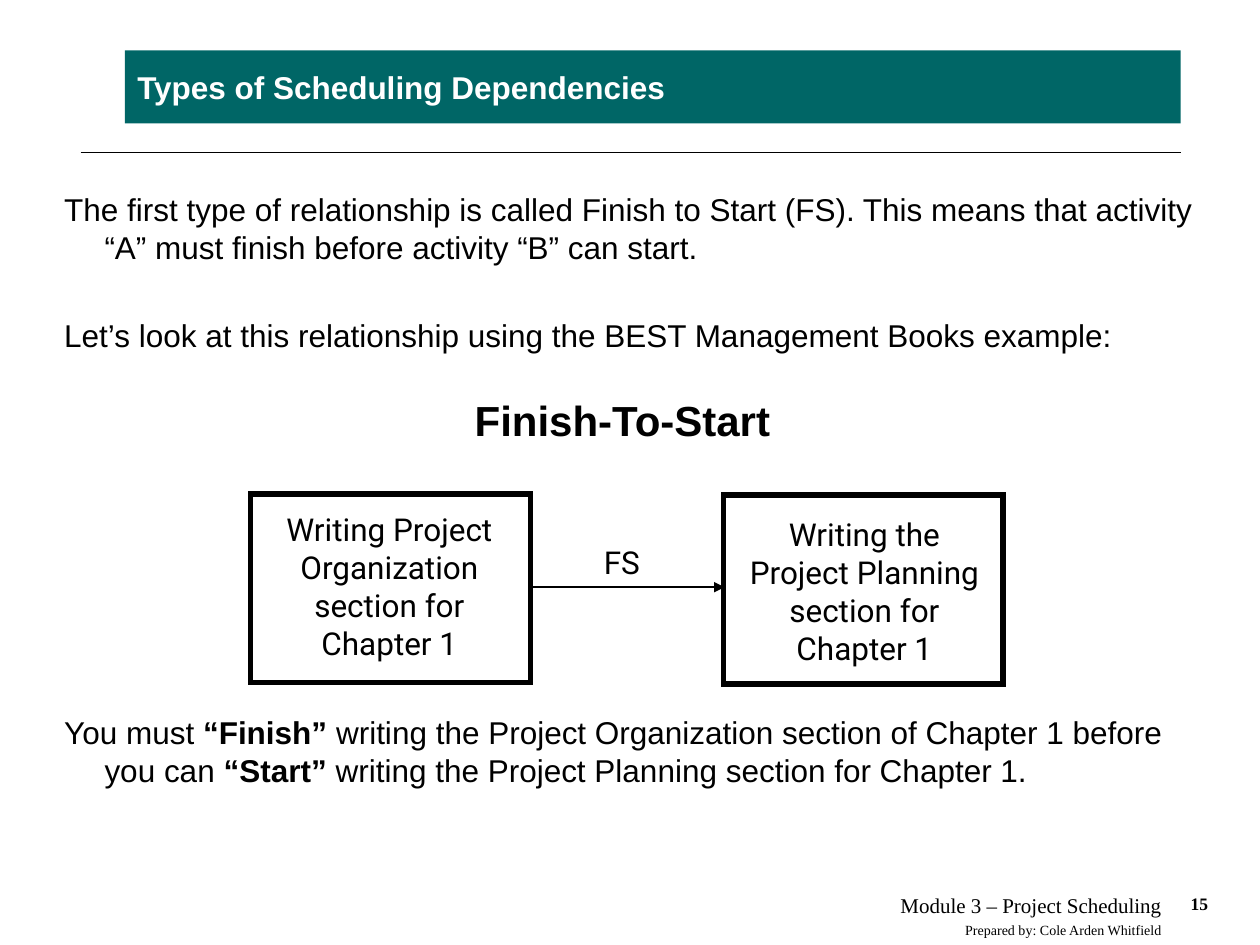
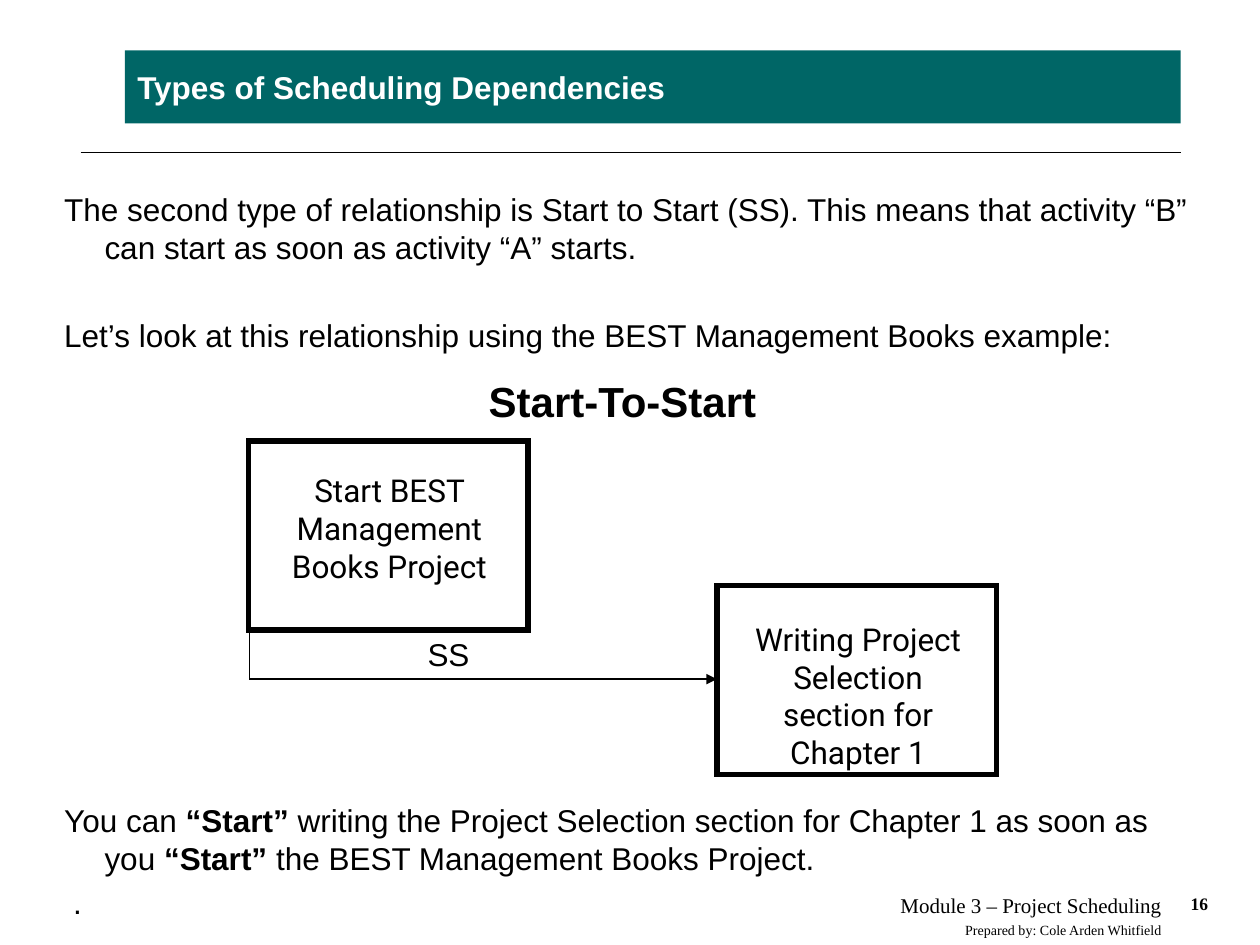
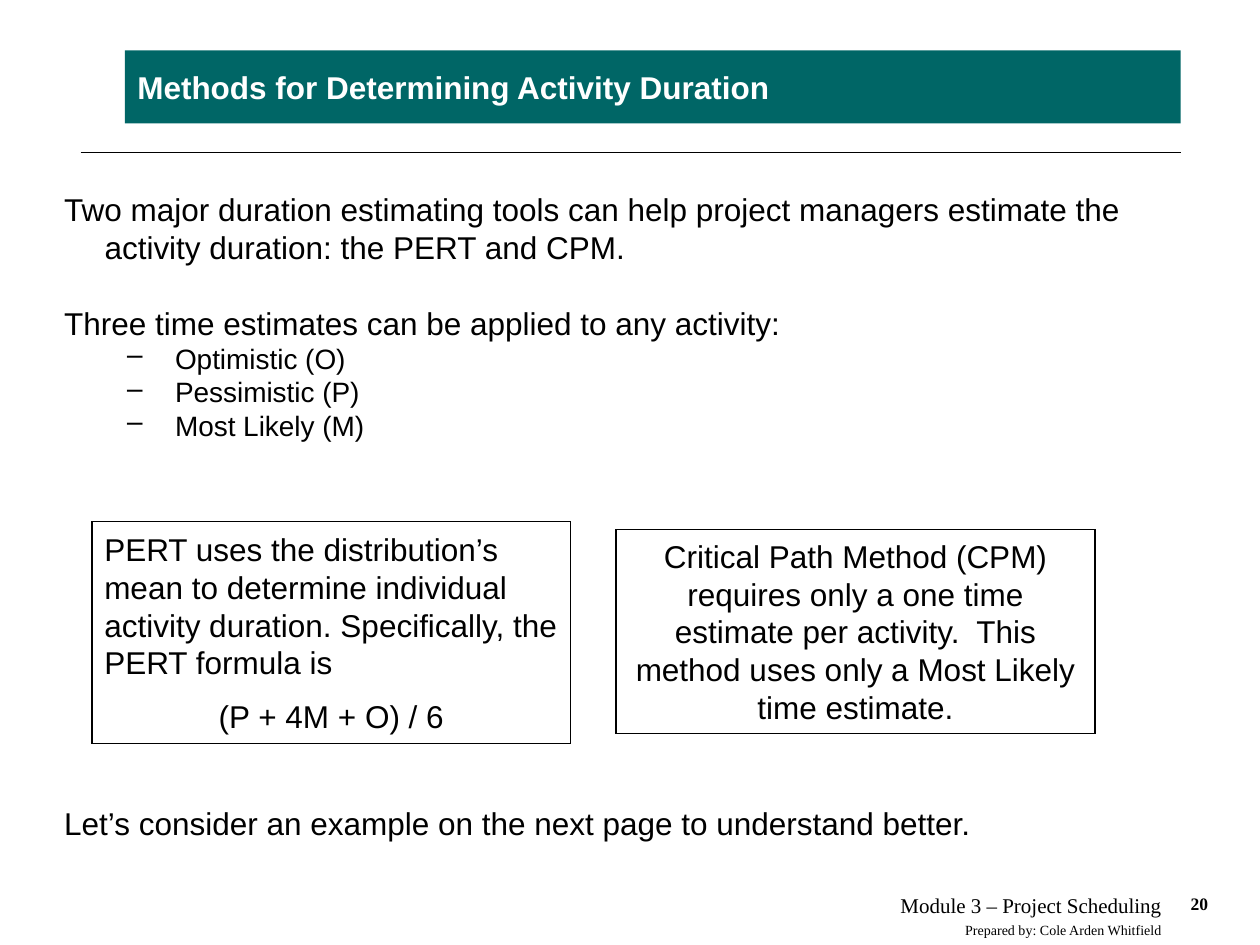
from pptx import Presentation
from pptx.dml.color import RGBColor
from pptx.enum.shapes import MSO_CONNECTOR, MSO_SHAPE
from pptx.enum.text import MSO_ANCHOR, MSO_AUTO_SIZE, PP_ALIGN
from pptx.oxml.ns import qn
from pptx.util import Inches, Pt
from lxml.etree import SubElement

TEAL, BLACK, WHITE = "006666", "000000", "FFFFFF"
SANS, ROBOTO, SERIF = "Arial", "Roboto", "Times New Roman"
LINE = 1.2
BODY_SIZE = 18
BODY_LEFT, BODY_WIDTH = 0.51, 8.97
BODY_INDENT = (0.32, -0.32)
BULLET_INDENT = (0.88, -0.38)
BOX_SIZE = (2.22, 1.5)
BOX_INSET = 0.18
CALLOUT_WIDTH = 3.8
EXAMPLE = "Let’s look at this relationship using the BEST Management Books example:"
EXAMPLE_SPACE = 28.8


def rgb(value):
    """Turn a hex string into a colour."""
    return RGBColor.from_string(value)


def apply(target, values):
    """Set every attribute in a dict of format values."""
    for name, value in values.items():
        setattr(target, name, value)


def write(tf, text, size=BODY_SIZE, font=SANS, color=BLACK, bold=False,
          align=PP_ALIGN.LEFT, before=0, indent=None, bullet=None):
    """Write one paragraph, with ** around its bold words."""
    p = tf.paragraphs[0] if not tf.text else tf.add_paragraph()
    apply(p, {"alignment": align, "space_before": Pt(before),
              "line_spacing": Pt(size * LINE)})
    pPr = p._p.get_or_add_pPr()
    if indent:
        pPr.set("marL", str(Inches(indent[0])))
        pPr.set("indent", str(Inches(indent[1])))
    if bullet:
        SubElement(pPr, qn("a:buChar")).set("char", bullet)
    for i, part in enumerate(text.split("**")):
        r = p.add_run()
        r.text = part
        apply(r.font, {"size": Pt(size), "name": font,
                       "bold": bold or i % 2 == 1})
        r.font.color.rgb = rgb(color)


def add_text(s, x, y, w, h, text, **style):
    """Add a wrapping text box without insets and return its text frame."""
    tf = s.shapes.add_textbox(Inches(x), Inches(y), Inches(w), Inches(h)).text_frame
    apply(tf, {"word_wrap": True, "margin_left": 0, "margin_right": 0,
               "margin_top": 0, "margin_bottom": 0})
    write(tf, text, **style)
    return tf


def add_rect(s, x, y, w, h, weight, fill=None):
    """Add a black-edged rectangle with sharp corners and return its text frame."""
    sp = s.shapes.add_shape(MSO_SHAPE.RECTANGLE, Inches(x), Inches(y),
                            Inches(w), Inches(h))
    sp.shadow.inherit = False
    if fill:
        sp.fill.solid()
        sp.fill.fore_color.rgb = rgb(fill)
    else:
        sp.fill.background()
    sp.line.color.rgb = rgb(BLACK)
    sp.line.width = Pt(weight)
    SubElement(sp.line._get_or_add_ln(), qn("a:miter")).set("lim", "800000")
    tf = sp.text_frame
    tf.word_wrap = True
    return tf


def add_activity(s, x, y, text, top, shift=0.01):
    """Add a heavy activity box whose text is inset from the top and shifted."""
    tf = add_rect(s, x, y, *BOX_SIZE, weight=3)
    apply(tf, {"vertical_anchor": MSO_ANCHOR.TOP, "margin_top": Inches(top),
               "margin_bottom": 0, "margin_left": Inches(BOX_INSET + shift),
               "margin_right": Inches(BOX_INSET - shift)})
    write(tf, text, font=ROBOTO, align=PP_ALIGN.CENTER)


def add_callout(s, x, y, h):
    """Add a thin white box for an explanation and return its text frame."""
    tf = add_rect(s, x, y, CALLOUT_WIDTH, h, weight=0.75, fill=WHITE)
    tf.vertical_anchor = MSO_ANCHOR.MIDDLE
    return tf


def add_line(s, x1, y1, x2, y2, arrow=False):
    """Add a thin black line, with an arrowhead if asked."""
    c = s.shapes.add_connector(MSO_CONNECTOR.STRAIGHT, Inches(x1), Inches(y1),
                               Inches(x2), Inches(y2))
    c.line.color.rgb = rgb(BLACK)
    c.line.width = Pt(1)
    if arrow:
        SubElement(c.line._get_or_add_ln(), qn("a:tailEnd")).set("type", "triangle")
    SubElement(c._element.spPr, qn("a:effectLst"))


def add_slide(prs, title, number):
    """Add a slide with the title band, rule and footers."""
    s = prs.slides.add_slide(prs.slide_layouts[5])
    sp = s.shapes.title
    apply(sp, {"left": Inches(0.99), "top": Inches(0.4),
               "width": Inches(8.38), "height": Inches(0.58)})
    sp.fill.solid()
    sp.fill.fore_color.rgb = rgb(TEAL)
    apply(sp.text_frame, {"vertical_anchor": MSO_ANCHOR.MIDDLE, "word_wrap": True,
                          "auto_size": MSO_AUTO_SIZE.NONE})
    write(sp.text_frame, title, color=WHITE, bold=True)
    add_line(s, 0.64, 1.21, 9.37, 1.21)
    add_text(s, 9.45, 7.09, 0.3, 0.17, number, size=10, font=SERIF, bold=True)
    add_text(s, 7.66, 7.31, 1.85, 0.14, "Prepared by: Cole Arden Whitfield",
             size=8, font=SERIF)
    add_text(s, 3.68, 7.08, 5.54, 0.2, "Module 3 – Project Scheduling",
             size=12, font=SERIF, align=PP_ALIGN.RIGHT)
    return s


def add_body(s, y, h, text):
    """Add body text with a hanging indent and return its text frame."""
    return add_text(s, BODY_LEFT, y, BODY_WIDTH, h, text, indent=BODY_INDENT)


def add_intro(s, text, follow, space, h=1.3):
    """Add the opening paragraph and the one that follows it."""
    tf = add_body(s, 1.51, h, text)
    write(tf, follow, before=space, indent=BODY_INDENT)
    return tf


def add_heading(s, y, text):
    """Add the centred heading of a diagram."""
    add_text(s, 3.44, y, 3, 0.4, text, size=24, bold=True, align=PP_ALIGN.CENTER)


def finish_to_start(prs):
    """Build the finish-to-start slide."""
    s = add_slide(prs, "Types of Scheduling Dependencies", "15")
    add_intro(s, "The first type of relationship is called Finish to Start (FS). This "
                 "means that activity “A” must finish before activity “B” can start.",
              EXAMPLE, EXAMPLE_SPACE)
    add_heading(s, 3.13, "Finish-To-Start")
    add_activity(s, 1.99, 3.92, "Writing Project Organization section for Chapter 1",
                 0.13, shift=-0.01)
    add_activity(s, 5.74, 3.93, "Writing the Project Planning section for Chapter 1", 0.16)
    add_line(s, 4.21, 4.66, 5.75, 4.66, arrow=True)
    add_text(s, 4.36, 4.31, 1.15, 0.3, "FS", font=ROBOTO, align=PP_ALIGN.CENTER)
    add_body(s, 5.66, 0.6, "You must **“Finish”** writing the Project Organization "
                           "section of Chapter 1 before you can **“Start”** writing "
                           "the Project Planning section for Chapter 1.")


def start_to_start(prs):
    """Build the start-to-start slide."""
    s = add_slide(prs, "Types of Scheduling Dependencies", "16")
    add_intro(s, "The second type of relationship is Start to Start (SS). This means "
                 "that activity “B” can start as soon as activity “A” starts.",
              EXAMPLE, EXAMPLE_SPACE)
    add_heading(s, 2.98, "Start-To-Start")
    add_activity(s, 1.97, 3.5, "Start BEST Management Books Project", 0.24)
    add_activity(s, 5.69, 4.65, "Writing Project Selection section for Chapter 1", 0.27)
    add_line(s, 1.98, 5, 1.98, 5.39)
    add_line(s, 1.98, 5.39, 5.69, 5.39, arrow=True)
    add_text(s, 2.86, 5.04, 1.4, 0.3, "SS", align=PP_ALIGN.CENTER)
    add_body(s, 6.36, 0.6, "You can **“Start”** writing the Project Selection section "
                           "for Chapter 1 as soon as you **“Start”** the BEST "
                           "Management Books Project.")
    add_text(s, 0.58, 7.01, 0.3, 0.3, ".")


def duration_methods(prs):
    """Build the slide on estimating activity duration."""
    s = add_slide(prs, "Methods for Determining Activity Duration", "20")
    tf = add_intro(s, "Two major duration estimating tools can help project managers "
                      "estimate the activity duration: the PERT and CPM.",
                   "Three time estimates can be applied to any activity:",
                   BODY_SIZE * LINE, h=2)
    for estimate in ("Optimistic (O)", "Pessimistic (P)", "Most Likely (M)"):
        write(tf, estimate, size=16, indent=BULLET_INDENT, bullet="–")
    pert = add_callout(s, 0.73, 4.14, 1.76)
    write(pert, "PERT uses the distribution’s mean to determine individual activity "
                "duration. Specifically, the PERT formula is")
    write(pert, "(P + 4M + O) / 6", align=PP_ALIGN.CENTER, before=9)
    cpm = add_callout(s, 4.89, 4.2, 1.62)
    write(cpm, "Critical Path Method (CPM) requires only a one time estimate per "
               "activity.  This method uses only a Most Likely time estimate.",
          align=PP_ALIGN.CENTER)
    add_body(s, 6.38, 0.3, "Let’s consider an example on the next page to understand "
                           "better.")


def main():
    """Build and save the slides."""
    prs = Presentation()
    apply(prs, {"slide_width": Inches(10), "slide_height": Inches(7.5)})
    finish_to_start(prs)
    start_to_start(prs)
    duration_methods(prs)
    prs.save("out.pptx")


if __name__ == "__main__":
    main()
